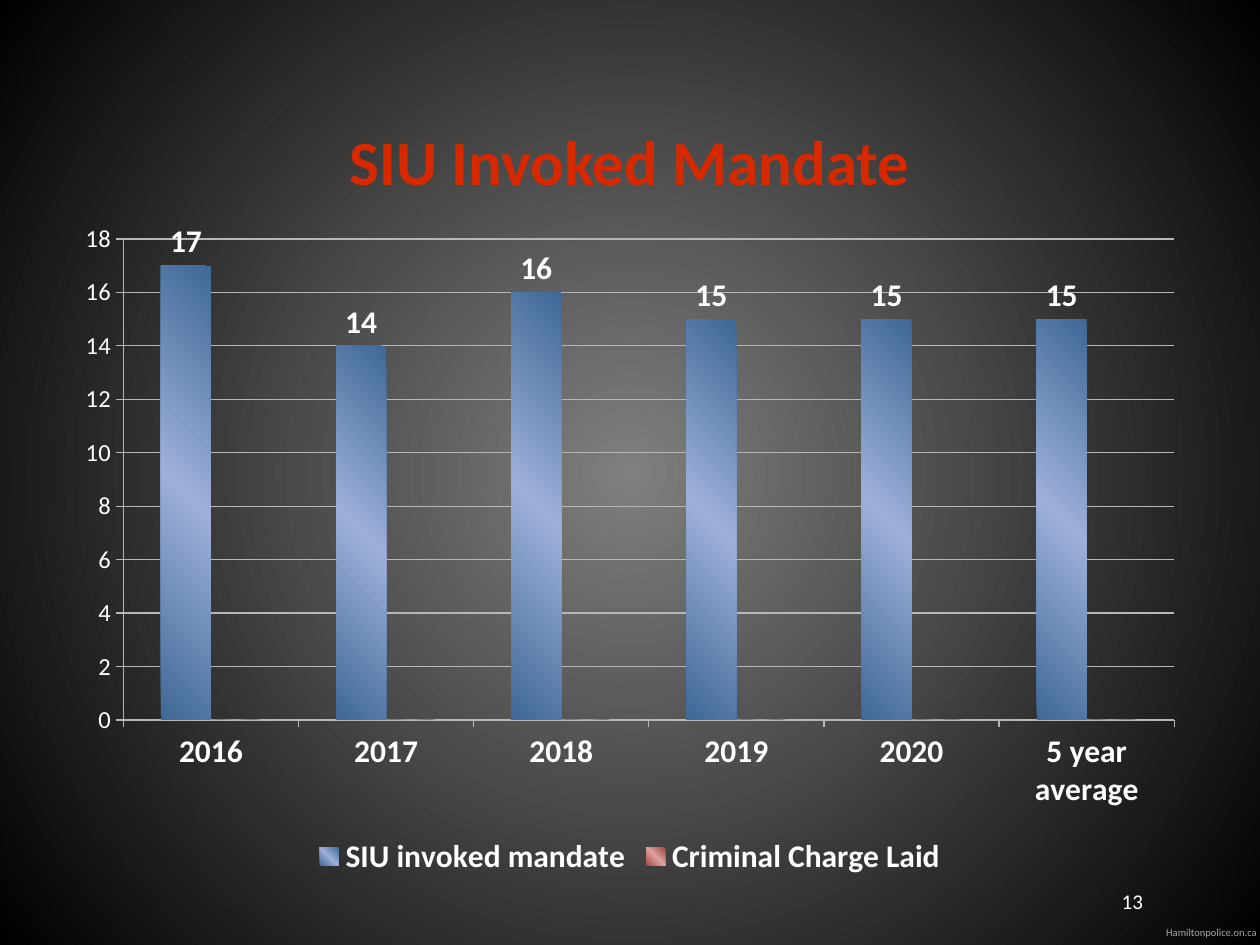
"""Build a slide with a column chart of SIU invoked mandates per year."""
import pptx
import pptx.chart.data
import pptx.dml.color
import pptx.enum.chart
import pptx.enum.text
import pptx.oxml
import pptx.oxml.ns
import pptx.util

Inches = pptx.util.Inches
Pt = pptx.util.Pt
ALIGN = pptx.enum.text.PP_ALIGN
ANCHOR = pptx.enum.text.MSO_ANCHOR
FONT = "Calibri"
HUES = {
    "title": "D62900", "text": "FFFFFF", "site": "A6A6A6", "grid": "B7B7B7",
    "glow": "7F7F7F", "edge": "000000",
    "blue": "3F6896", "pale blue": "9DB0D9",
    "red": "A04442", "pale red": "E0A3A2",
}
YEARS = ["2016", "2017", "2018", "2019", "2020", "5 year average"]
ROWS = {
    "SIU invoked mandate": ([17, 14, 16, 15, 15, 15], "blue"),
    "Criminal Charge Laid": ([0] * 6, "red"),
}
RADIAL = ('<a:path path="circle"><a:fillToRect l="50000" t="50000" '
          'r="50000" b="50000"/></a:path>')
SLANT = '<a:lin ang="18900000" scaled="0"/>'


def hue(name):
    return pptx.dml.color.RGBColor.from_string(HUES[name])


def style(font, size, name="text", bold=False):
    font.name = FONT
    font.size = Pt(size)
    font.bold = bold
    font.color.rgb = hue(name)


def blend(fill, root, names, shape):
    fill.gradient()
    old = root.find(".//" + pptx.oxml.ns.qn("a:gradFill"))
    step = 100000 // (len(names) - 1)
    stops = "".join(
        f'<a:gs pos="{i * step}"><a:srgbClr val="{HUES[n]}"/></a:gs>'
        for i, n in enumerate(names))
    new = pptx.oxml.parse_xml(
        f'<a:gradFill {pptx.oxml.ns.nsdecls("a")} rotWithShape="1">'
        f'<a:gsLst>{stops}</a:gsLst>{shape}</a:gradFill>')
    old.getparent().replace(old, new)


def label(slide, text, box, size, name, align, anchor=ANCHOR.TOP,
          bold=False, inset=None, wrap=True):
    frame = slide.shapes.add_textbox(*map(Inches, box)).text_frame
    frame.word_wrap = wrap
    frame.vertical_anchor = anchor
    if inset is not None:
        frame.margin_left = frame.margin_right = Inches(inset)
        frame.margin_top = frame.margin_bottom = Inches(inset)
    para = frame.paragraphs[0]
    para.alignment = align
    run = para.add_run()
    run.text = text
    style(run.font, size, name, bold)


def axis(item, size, bold):
    item.major_tick_mark = pptx.enum.chart.XL_TICK_MARK.OUTSIDE
    item.minor_tick_mark = pptx.enum.chart.XL_TICK_MARK.NONE
    item.format.line.color.rgb = hue("grid")
    style(item.tick_labels.font, size, bold=bold)


def bars(slide, box):
    data = pptx.chart.data.CategoryChartData()
    data.categories = YEARS
    for name, (vals, _) in ROWS.items():
        data.add_series(name, vals)
    kind = pptx.enum.chart.XL_CHART_TYPE.COLUMN_CLUSTERED
    chart = slide.shapes.add_chart(kind, *map(Inches, box), data).chart
    chart.has_title = False
    style(chart.font, 18)
    axis(chart.category_axis, 18, True)
    axis(chart.value_axis, 14, False)
    scale = chart.value_axis
    scale.minimum_scale, scale.maximum_scale, scale.major_unit = 0, 18, 2
    scale.has_major_gridlines = True
    scale.major_gridlines.format.line.color.rgb = hue("grid")
    chart.has_legend = True
    chart.legend.position = pptx.enum.chart.XL_LEGEND_POSITION.BOTTOM
    chart.legend.include_in_layout = False
    style(chart.legend.font, 18, bold=True)
    plot = chart.plots[0]
    plot.gap_width = 150
    plot.overlap = 0
    plot.vary_by_categories = False
    for row in plot.series:
        tone = ROWS[row.name][1]
        blend(row.format.fill, row.format.element
              if hasattr(row.format, "element") else row._element,
              [tone, "pale " + tone, tone], SLANT)
    tags = plot.series[0].data_labels
    tags.show_value = True
    tags.position = pptx.enum.chart.XL_LABEL_POSITION.OUTSIDE_END
    style(tags.font, 18, bold=True)


def main():
    deck = pptx.Presentation()
    deck.slide_width, deck.slide_height = Inches(10), Inches(7.5)
    slide = deck.slides.add_slide(deck.slide_layouts[6])
    blend(slide.background.fill, slide.element, ["glow", "edge"], RADIAL)
    label(slide, "Hamiltonpolice.on.ca", (9.23, 7.35, 0.77, 0.1), 6, "site",
          ALIGN.CENTER, inset=0, wrap=False)
    label(slide, "SIU Invoked Mandate", (0.5, 0.92, 9, 1.58), 36, "title",
          ALIGN.CENTER, bold=True)
    bars(slide, (0.5, 1.67, 9, 5.33))
    label(slide, "13", (7.17, 6.95, 2, 0.4), 12, "text", ALIGN.RIGHT,
          ANCHOR.MIDDLE)
    deck.save("out.pptx")


if __name__ == "__main__":
    main()
